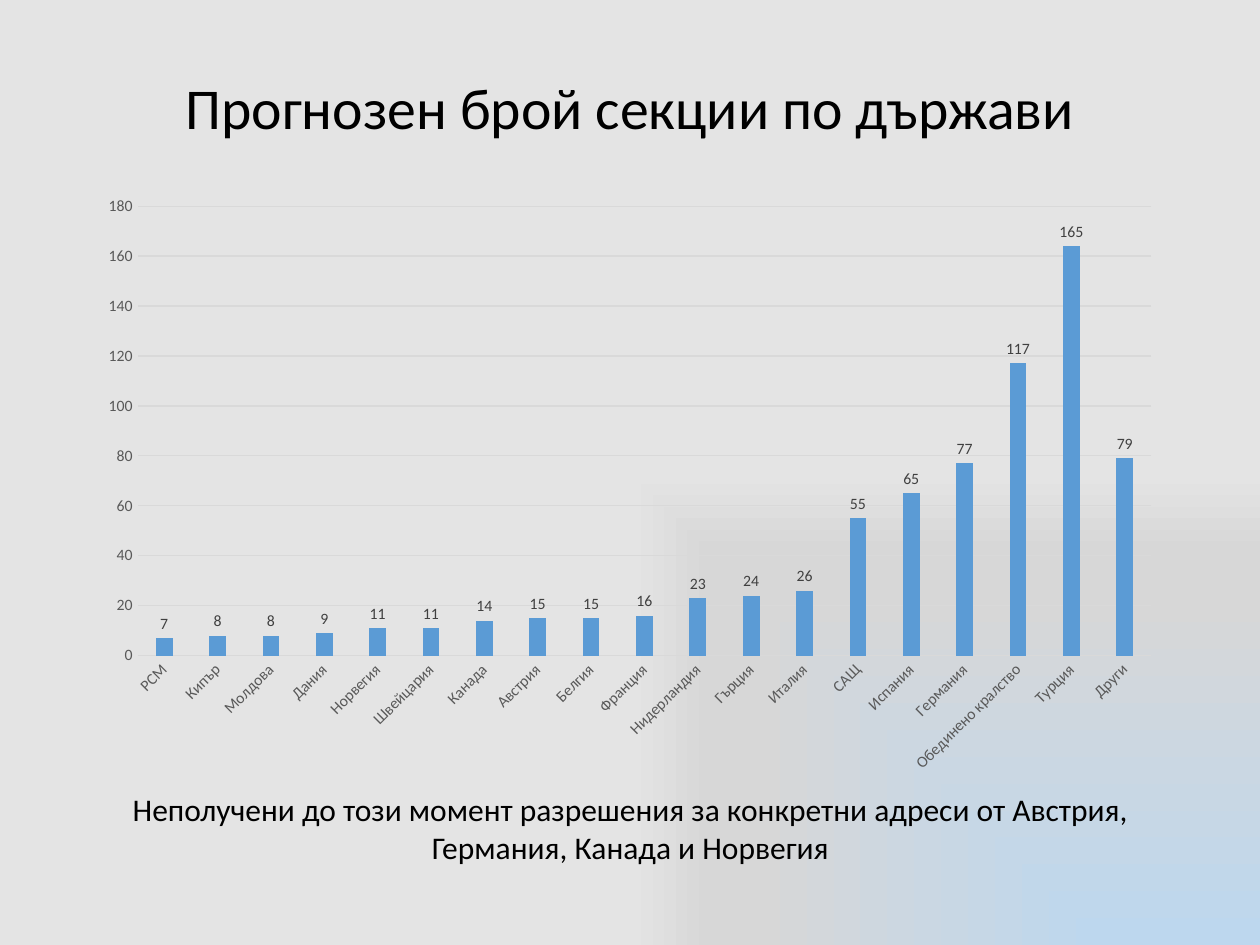
from pptx import Presentation
from pptx.chart.data import CategoryChartData
from pptx.dml.color import RGBColor
from pptx.enum.chart import XL_CHART_TYPE as ChartType
from pptx.enum.chart import XL_LABEL_POSITION as LabelPosition
from pptx.enum.chart import XL_TICK_MARK as TickMark
from pptx.enum.text import MSO_ANCHOR as Anchor
from pptx.enum.text import MSO_AUTO_SIZE as AutoSize
from pptx.enum.text import PP_ALIGN as Align
from pptx.oxml import parse_xml
from pptx.oxml.ns import nsdecls, qn
from pptx.util import Cm, Pt

FONT = "Calibri"
COLORS = {
    "text": "000000",
    "axis": "595959",
    "label": "404040",
    "grid": "D9D9D9",
    "bar": "5B9BD5",
    "blue": "BDD7EE",
    "gray": "D7D7D7",
    "light": "E4E4E4",
}
BACKGROUND_STOPS = [(0, "blue"), (74, "gray"), (83, "gray"), (100, "light")]
TITLE = "Прогнозен брой секции по държави"
NOTE = (
    "Неполучени до този момент разрешения за конкретни адреси "
    "от Австрия, Германия, Канада и Норвегия"
)
SECTIONS = {
    "РСМ": 7, "Кипър": 8, "Молдова": 8, "Дания": 9, "Норвегия": 11,
    "Швейцария": 11, "Канада": 14, "Австрия": 15, "Белгия": 15,
    "Франция": 16, "Нидерландия": 23, "Гърция": 24, "Италия": 26,
    "САЩ": 55, "Испания": 65, "Германия": 77, "Обединено кралство": 117,
    "Турция": 164, "Други": 79,
}
CUSTOM_LABELS = {"Турция": "165"}


def rgb(name):
    return RGBColor.from_string(COLORS[name])


def style_font(font, size, color):
    font.name = FONT
    font.size = Pt(size)
    font.bold = False
    font.color.rgb = rgb(color)


def style_line(line, color):
    line.color.rgb = rgb(color)
    line.width = Pt(0.75)


def set_background(slide):
    slide.background.fill.solid()
    solid = next(slide.background._cSld.iter(qn("a:solidFill")))
    stops = "".join(
        f'<a:gs pos="{position * 1000}"><a:srgbClr val="{COLORS[color]}"/></a:gs>'
        for position, color in BACKGROUND_STOPS
    )
    gradient = parse_xml(
        f'<a:gradFill {nsdecls("a")} rotWithShape="1"><a:gsLst>{stops}</a:gsLst>'
        '<a:path path="rect"><a:fillToRect l="100000" t="100000"/></a:path>'
        '<a:tileRect r="-100000" b="-100000"/></a:gradFill>'
    )
    solid.getparent().replace(solid, gradient)


def write_centered(frame, text, size):
    frame.word_wrap = True
    frame.text = text
    paragraph = frame.paragraphs[0]
    paragraph.alignment = Align.CENTER
    style_font(paragraph.runs[0].font, size, "text")
    return paragraph


def add_title(slide):
    title = slide.shapes.title
    title.left, title.top, title.width, title.height = (
        Cm(1.75), Cm(1.02), Cm(21.9), Cm(3.68)
    )
    frame = title.text_frame
    paragraph = write_centered(frame, TITLE, 33)
    paragraph.line_spacing = 0.9
    frame.auto_size = AutoSize.NONE
    frame.vertical_anchor = Anchor.MIDDLE
    frame.margin_bottom = Cm(1.4)


def add_note(slide):
    note = slide.shapes.add_textbox(Cm(1.37), Cm(15.8), Cm(22.68), Cm(1.8))
    write_centered(note.text_frame, NOTE, 18)
    note.text_frame.auto_size = AutoSize.SHAPE_TO_FIT_TEXT


def style_axis(axis):
    axis.major_tick_mark = TickMark.NONE
    axis.minor_tick_mark = TickMark.NONE
    style_font(axis.tick_labels.font, 9, "axis")


def style_axes(chart):
    countries, counts = chart.category_axis, chart.value_axis
    style_axis(countries)
    style_line(countries.format.line, "grid")
    label_body = countries._element.find(qn("c:txPr")).find(qn("a:bodyPr"))
    label_body.set("rot", "-2700000")
    label_body.set("vert", "horz")

    style_axis(counts)
    counts.minimum_scale, counts.maximum_scale, counts.major_unit = 0, 180, 20
    counts.format.line.fill.background()
    counts.has_major_gridlines = True
    style_line(counts.major_gridlines.format.line, "grid")


def style_bars(chart):
    plot = chart.plots[0]
    plot.gap_width, plot.overlap = 219, -27
    plot.vary_by_categories = False
    bars = plot.series[0]
    bars.invert_if_negative = False
    bars.format.fill.solid()
    bars.format.fill.fore_color.rgb = rgb("bar")

    labels = bars.data_labels
    labels.show_value = True
    labels.position = LabelPosition.OUTSIDE_END
    style_font(labels.font, 9, "label")
    countries = list(SECTIONS)
    for country, text in CUSTOM_LABELS.items():
        label = bars.points[countries.index(country)].data_label
        label.text_frame.text = text
        style_font(label.text_frame.paragraphs[0].runs[0].font, 9, "label")
        label.position = LabelPosition.OUTSIDE_END


def add_section_chart(slide):
    data = CategoryChartData()
    data.categories = list(SECTIONS)
    data.add_series("Series 1", list(SECTIONS.values()))
    chart = slide.shapes.add_chart(
        ChartType.COLUMN_CLUSTERED, Cm(1.75), Cm(3.73), Cm(21.9), Cm(12.09), data
    ).chart
    chart.has_title = False
    chart.has_legend = False
    style_font(chart.font, 10, "text")
    style_axes(chart)
    style_bars(chart)


def main():
    presentation = Presentation()
    presentation.slide_width, presentation.slide_height = Cm(25.4), Cm(19.05)
    slide = presentation.slides.add_slide(presentation.slide_layouts[5])
    set_background(slide)
    add_title(slide)
    add_section_chart(slide)
    add_note(slide)
    presentation.save("out.pptx")


if __name__ == "__main__":
    main()
